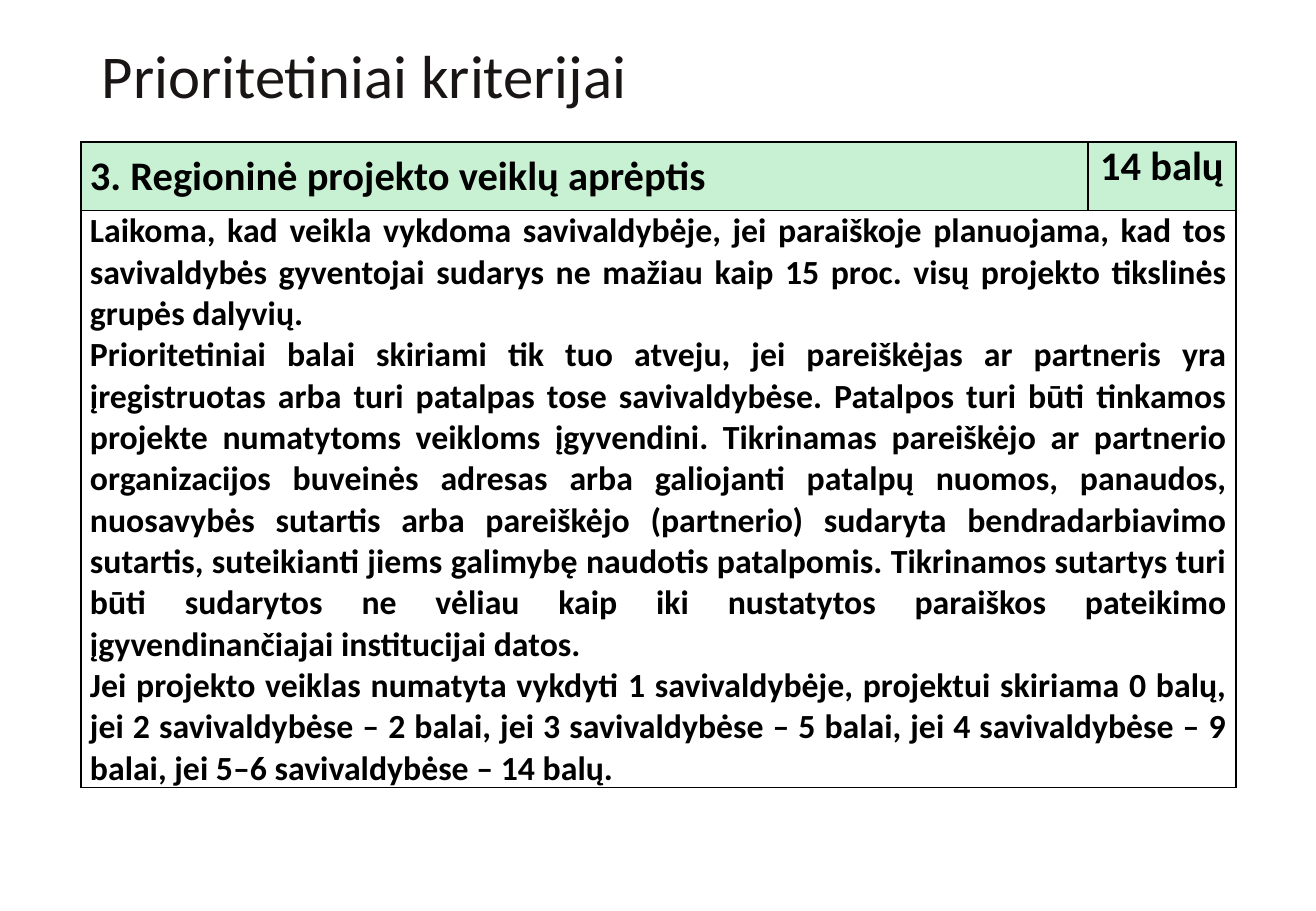
"""Build the slide on priority criteria with its score table."""
import pptx
import pptx.util
import pptx.dml.color
import pptx.enum.text
import pptx.oxml.ns
import lxml.etree

TITLE = "Prioritetiniai kriterijai"
HEAD = "3. Regioninė projekto veiklų aprėptis"
SCORE = "14 balų"
RULES = [
    "Laikoma, kad veikla vykdoma savivaldybėje, jei paraiškoje planuojama, kad tos "
    "savivaldybės gyventojai sudarys ne mažiau kaip 15 proc. visų projekto tikslinės "
    "grupės dalyvių.",
    "Prioritetiniai balai skiriami tik tuo atveju, jei pareiškėjas ar partneris yra "
    "įregistruotas arba turi patalpas tose savivaldybėse. Patalpos turi būti tinkamos "
    "projekte numatytoms veikloms įgyvendini. Tikrinamas pareiškėjo ar partnerio "
    "organizacijos buveinės adresas arba galiojanti patalpų nuomos, panaudos, "
    "nuosavybės sutartis arba pareiškėjo (partnerio) sudaryta bendradarbiavimo "
    "sutartis, suteikianti jiems galimybę naudotis patalpomis. Tikrinamos sutartys "
    "turi būti sudarytos ne vėliau kaip iki nustatytos paraiškos pateikimo "
    "įgyvendinančiajai institucijai datos.",
    "Jei projekto veiklas numatyta vykdyti 1 savivaldybėje, projektui skiriama 0 balų, "
    "jei 2 savivaldybėse – 2 balai, jei 3 savivaldybėse – 5 balai, jei 4 savivaldybėse "
    "– 9 balai, jei 5–6 savivaldybėse – 14 balų.",
]
COLS = [1007, 148]
ROWS = [68, 577]
SIDE = 9
MINT, WHITE, BLACK, INK = "C7F1D2", "FFFFFF", "000000", "191514"
ALIGN = pptx.enum.text.PP_ALIGN
MIDDLE = pptx.enum.text.MSO_ANCHOR.MIDDLE
TOP = pptx.enum.text.MSO_ANCHOR.TOP


def px(n):
    return pptx.util.Emu(round(n * 914400 / 121.5))


def color(code):
    return pptx.dml.color.RGBColor.from_string(code)


def write(frame, lines, size, code, bold, align, lead):
    frame.text = "\n".join(lines)
    for para in frame.paragraphs:
        para.alignment = align
        para.line_spacing = lead
        for run in para.runs:
            run.font.name = "Calibri"
            run.font.size = pptx.util.Pt(size)
            run.font.bold = bold
            run.font.color.rgb = color(code)


def border(cell):
    props = cell._tc.get_or_add_tcPr()
    for n, side in enumerate(("lnL", "lnR", "lnT", "lnB")):
        line = lxml.etree.Element(pptx.oxml.ns.qn("a:" + side), w="12700")
        fill = lxml.etree.SubElement(line, pptx.oxml.ns.qn("a:solidFill"))
        lxml.etree.SubElement(fill, pptx.oxml.ns.qn("a:srgbClr"), val=BLACK)
        props.insert(n, line)


def main():
    deck = pptx.Presentation()
    deck.slide_width, deck.slide_height = px(1316), px(911)
    slide = deck.slides.add_slide(deck.slide_layouts[6])

    title = slide.shapes.add_textbox(px(90), px(43), px(1135), px(72)).text_frame
    title.word_wrap = True
    title.vertical_anchor = MIDDLE
    write(title, [TITLE], 36, INK, False, ALIGN.LEFT, 0.9)

    table = slide.shapes.add_table(
        2, 2, px(81), px(142), px(sum(COLS)), px(sum(ROWS))).table
    for col, width in zip(table.columns, COLS):
        col.width = px(width)
    for row, height in zip(table.rows, ROWS):
        row.height = px(height)
    table.cell(1, 0).merge(table.cell(1, 1))

    cells = [
        (0, 0, [HEAD], 24, ALIGN.LEFT, None, MIDDLE, 10, MINT),
        (0, 1, [SCORE], 24, ALIGN.CENTER, pptx.util.Pt(18), MIDDLE, 5, MINT),
        (1, 0, RULES, 20, ALIGN.JUSTIFY, None, TOP, 0, WHITE),
    ]
    for row, col, lines, size, align, lead, anchor, pad, fill in cells:
        cell = table.cell(row, col)
        cell.margin_left = cell.margin_right = px(SIDE)
        cell.margin_top = cell.margin_bottom = px(pad)
        cell.vertical_anchor = anchor
        cell.fill.solid()
        cell.fill.fore_color.rgb = color(fill)
        write(cell.text_frame, lines, size, BLACK, True, align, lead)
    for cell in table.iter_cells():
        border(cell)

    deck.save("out.pptx")


if __name__ == "__main__":
    main()
